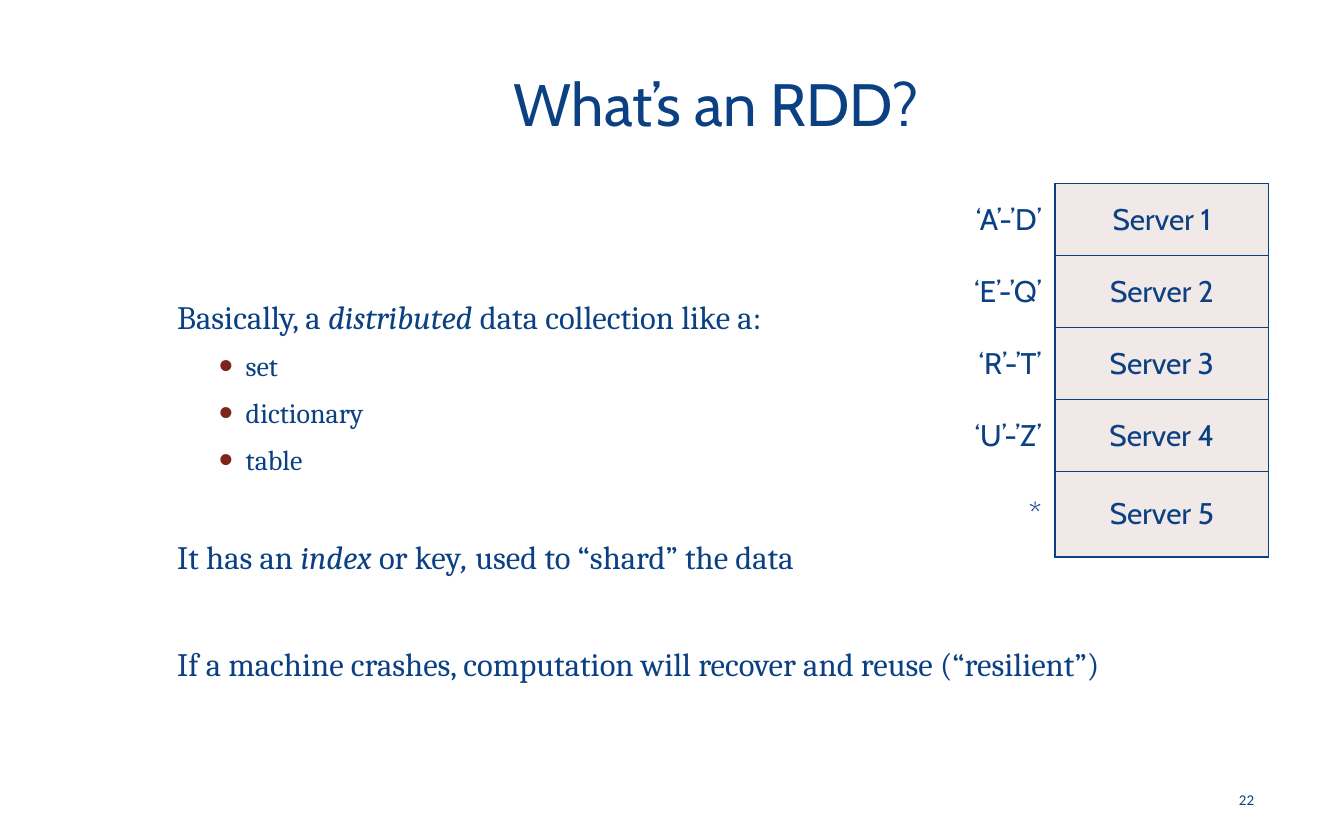
from lxml.etree import SubElement
from pptx import Presentation
from pptx.dml.color import RGBColor
from pptx.enum.text import MSO_ANCHOR as Anchor, PP_ALIGN as Align
from pptx.oxml.ns import qn
from pptx.util import Inches, Pt

NAVY, MAROON, BLUSH, WHITE = "0B4183", "7F241A", "F1E8E8", "FFFFFF"
SERVERS = [
    ("‘A’-’D’", "Server 1"),
    ("‘E’-’Q’", "Server 2"),
    ("‘R’-’T’", "Server 3"),
    ("‘U’-’Z’", "Server 4"),
    ("*", "Server 5"),
]


def color(code):
    return RGBColor.from_string(code)


def write(para, text, font="Cabin", size=16, align=Align.LEFT, before=0, after=0):
    """Fill a paragraph; parts of the text between asterisk pairs are italic."""
    para.alignment = align
    para.space_before, para.space_after = Pt(before), Pt(after)
    for index, part in enumerate(text.split("**")):
        if part:
            span = para.add_run()
            span.text = part
            span.font.name, span.font.size = font, Pt(size)
            span.font.italic = index % 2 == 1
            span.font.color.rgb = color(NAVY)


def add_bullet(para, left=0.51, hanging=0.2):
    para.level = 1
    props = para._p.get_or_add_pPr()
    props.set("marL", str(Inches(left)))
    props.set("indent", str(-Inches(hanging)))
    tint = SubElement(props, qn("a:buClr"))
    SubElement(tint, qn("a:srgbClr"), val=MAROON)
    SubElement(props, qn("a:buSzPct"), val="145000")
    SubElement(props, qn("a:buFont"), typeface="Arial")
    SubElement(props, qn("a:buChar"), char="•")


def add_borders(cell, **sides):
    props = cell._tc.get_or_add_tcPr()
    for side in "LRTB":
        line = SubElement(props, qn(f"a:ln{side}"), w=str(Pt(1)))
        fill = SubElement(line, qn("a:solidFill"))
        SubElement(fill, qn("a:srgbClr"), val=sides[side])


class SlideBuilder:
    """Places elements by percentages of the slide's width and height."""

    def __init__(self, deck):
        self.deck = deck
        self.slide = deck.slides.add_slide(deck.slide_layouts[6])

    def across(self, share):
        return round(self.deck.slide_width * share / 100)

    def down(self, share):
        return round(self.deck.slide_height * share / 100)

    def frame(self, left, top, width, height):
        box = self.slide.shapes.add_textbox(
            self.across(left), self.down(top), self.across(width), self.down(height))
        frame = box.text_frame
        frame.word_wrap = True
        frame.vertical_anchor = Anchor.MIDDLE
        return frame

    def label(self, text, *place, **style):
        write(self.frame(*place).paragraphs[0], text, **style)

    def body(self, lines, *place):
        """Write lines of (text, is bullet, extra space before in points)."""
        frame = self.frame(*place)
        for index, (text, bullet, gap) in enumerate(lines):
            para = frame.add_paragraph() if index else frame.paragraphs[0]
            size, before = (15, 3.3) if bullet else (17.5, 4.1)
            write(para, text, font="Cambria", size=size, before=before + gap, after=3.8)
            if bullet:
                add_bullet(para)

    def table(self, rows, left, top, widths, heights):
        table = self.slide.shapes.add_table(
            len(rows), len(widths), self.across(left), self.down(top),
            self.across(sum(widths)), self.down(sum(heights))).table
        table.first_row = table.horz_banding = False
        for column, width in zip(table.columns, widths):
            column.width = self.across(width)
        for row, height, texts in zip(table.rows, heights, rows):
            row.height = self.down(height)
            key, server = row.cells
            add_borders(key, L=WHITE, R=NAVY, T=WHITE, B=WHITE)
            key.fill.background()
            add_borders(server, L=NAVY, R=NAVY, T=NAVY, B=NAVY)
            server.fill.solid()
            server.fill.fore_color.rgb = color(BLUSH)
            for cell, text, align in zip((key, server), texts, (Align.RIGHT, Align.CENTER)):
                cell.vertical_anchor = Anchor.MIDDLE
                write(cell.text_frame.paragraphs[0], text, align=align)


def main():
    deck = Presentation()
    deck.slide_width, deck.slide_height = Inches(10), Inches(6.25)
    page = SlideBuilder(deck)
    page.label("What’s an RDD?", 12.2, 2.7, 82.2, 19, size=32, align=Align.CENTER)
    page.body([
        ("Basically, a **distributed** data collection like a:", False, 0),
        ("set", True, 0),
        ("dictionary", True, 0),
        ("table", True, 0),
        ("It has an **index** or key**, **used to “shard” the data", False, 24.6),
        ("If a machine crashes, computation will recover and reuse (“resilient”)", False, 28.4),
    ], 12.2, 25.4, 82.2, 65.8)
    page.label("22", 89.8, 92.5, 4.5, 5.3, font="Calibri", size=8, align=Align.RIGHT)
    page.table(SERVERS, 70.5, 21.85, [8, 15.9], [8.57] * 4 + [10.2])
    deck.save("out.pptx")


if __name__ == "__main__":
    main()
